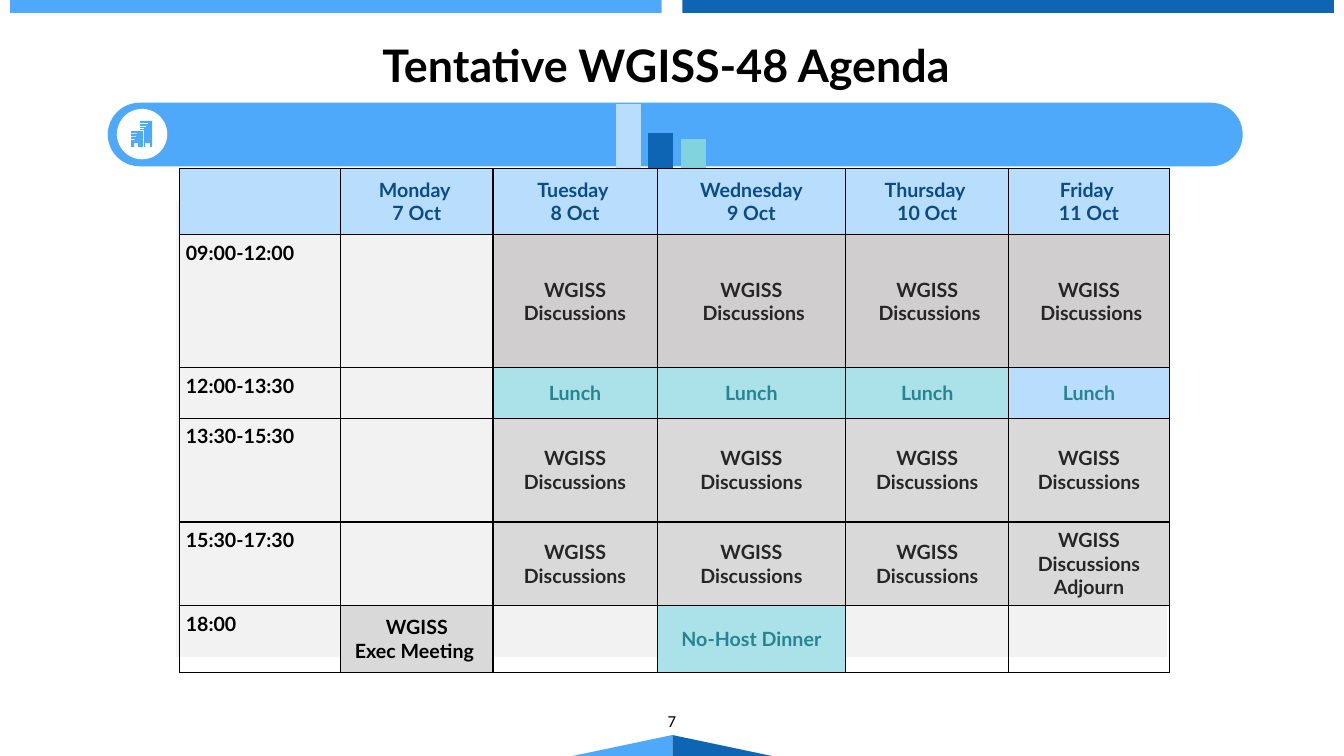
from lxml.etree import SubElement
from pptx import Presentation
from pptx.chart.data import CategoryChartData
from pptx.dml.color import RGBColor
from pptx.enum.chart import XL_CHART_TYPE as ChartType
from pptx.enum.shapes import MSO_SHAPE as Preset
from pptx.enum.text import MSO_ANCHOR as Anchor, PP_ALIGN as Align
from pptx.oxml import parse_xml
from pptx.oxml.ns import nsdecls, qn
from pptx.util import Pt

BLUE, NAVY, PALE, WHITE, BLACK = "4EA9FA", "0E65B4", "B8DDFD", "FFFFFF", "000000"
TEAL, MINT, GREY, DARK = "268591", "ABE2E9", "D9D9D9", "262626"

COLUMNS = [115.2, 108.7, 117.4, 134.6, 116.6, 114.5]
ROWS = [47.5, 95, 36, 74.2, 59.8, 47.5]
SESSION, SPLIT, INDENTED = "WGISS Discussions", "WGISS\nDiscussions", "WGISS\n Discussions"
AGENDA = [
    ["", "Monday \n7 Oct", "Tuesday \n8 Oct", "Wednesday\n9 Oct", "Thursday \n10 Oct", "Friday \n11 Oct"],
    ["09:00-12:00", "", SESSION, INDENTED, INDENTED, INDENTED],
    ["12:00-13:30", "", "Lunch", "Lunch", "Lunch", "Lunch"],
    ["13:30-15:30", "", SESSION, SPLIT, SESSION, SESSION],
    ["15:30-17:30", "", SESSION, SPLIT, SESSION, SESSION + "\nAdjourn"],
    ["18:00", "WGISS\nExec Meeting ", "", "No-Host Dinner", "", ""],
]
CELL_STYLES = {
    "H": (PALE, "0A4C87"), "M": ("D0CECE", DARK), "S": (GREY, DARK), "E": (GREY, BLACK),
    "L": (MINT, TEAL), "F": (PALE, TEAL), "T": (None, BLACK), ".": (None, BLACK),
}
STYLE_GRID = ["HHHHHH", "T.MMMM", "T.LLLF", "T.SSSS", "T.SSSS", "TE.D..".replace("D", "L")]

TALL_BUILDING = [
    (100.1, 86.4), (108.7, 86.4), (108.7, 105.1), (107.3, 105.1), (107.3, 102.2), (103.7, 102.2),
    (103.7, 105.1), (103, 105.1), (103, 92.9), (100.1, 92.9), (100.1, 92.2), (103, 92.2),
    (103, 91.4), (100.1, 91.4), (100.1, 90.7), (104.4, 90.7), (104.4, 90), (100.1, 90),
    (100.1, 88.6), (105.8, 88.6), (105.8, 87.8), (100.1, 87.8),
]
LOW_BUILDING = [
    (93.6, 93.6), (102.2, 93.6), (102.2, 105.1), (98.6, 105.1), (98.6, 102.2), (95.8, 102.2),
    (95.8, 105.1), (93.6, 105.1), (93.6, 100.1), (96.1, 100.1), (96.1, 99.4), (93.6, 99.4),
    (93.6, 97.9), (97.2, 97.9), (97.2, 97.2), (93.6, 97.2), (93.6, 95.9), (97.9, 95.9),
    (97.9, 95.4), (93.6, 95.4),
]


def color(hex_code):
    """Return the colour for a hex string."""
    return RGBColor.from_string(hex_code)


def paint(shape, fill):
    """Give a shape a plain fill without line or shadow."""
    shape.shadow.inherit = False
    shape.fill.solid()
    shape.fill.fore_color.rgb = color(fill)
    shape.line.fill.background()


def add_preset(slide, preset, left, top, width, height, fill):
    """Add a filled preset shape."""
    shape = slide.shapes.add_shape(preset, Pt(left), Pt(top), Pt(width), Pt(height))
    paint(shape, fill)
    return shape


def add_polygon(slide, points, fill):
    """Add a filled closed outline."""
    corners = [(Pt(x), Pt(y)) for x, y in points]
    builder = slide.shapes.build_freeform(*corners[0])
    builder.add_line_segments(corners[1:], close=True)
    paint(builder.convert_to_shape(), fill)


def style_text(frame, font_name, size, hex_code, align, bold):
    """Format every paragraph of a text frame."""
    frame.word_wrap = True
    for paragraph in frame.paragraphs:
        paragraph.alignment = align
        font = paragraph.font
        font.name, font.size, font.bold = font_name, Pt(size), bold
        font.color.rgb = color(hex_code)


def add_label(slide, text, left, top, width, height, font_name, size, bold=False):
    """Add a centred line of text."""
    box = slide.shapes.add_textbox(Pt(left), Pt(top), Pt(width), Pt(height))
    frame = box.text_frame
    frame.text = text
    frame.vertical_anchor = Anchor.MIDDLE
    frame.margin_left = frame.margin_right = frame.margin_top = frame.margin_bottom = 0
    style_text(frame, font_name, size, BLACK, Align.CENTER, bold)


def add_borders(cell):
    """Draw a thin black line on each side of a cell."""
    properties = cell._tc.get_or_add_tcPr()
    for index, side in enumerate(("lnL", "lnR", "lnT", "lnB")):
        properties.insert(index, parse_xml(
            f'<a:{side} {nsdecls("a")} w="12700"><a:solidFill>'
            f'<a:srgbClr val="{BLACK}"/></a:solidFill></a:{side}>'))


def fill_cell(cell, text, style):
    """Write and format one agenda cell."""
    fill, hex_code = CELL_STYLES[style]
    if fill:
        cell.fill.solid()
        cell.fill.fore_color.rgb = color(fill)
    else:
        cell.fill.background()
    cell.margin_left = cell.margin_right = cell.margin_top = cell.margin_bottom = Pt(4.5)
    cell.vertical_anchor = Anchor.TOP if style == "T" else Anchor.MIDDLE
    cell.text = text
    align = Align.LEFT if style == "T" else Align.CENTER
    style_text(cell.text_frame, "Lato", 14, hex_code, align, True)
    add_borders(cell)


def add_agenda(slide):
    """Add the agenda table."""
    table = slide.shapes.add_table(
        len(ROWS), len(COLUMNS), Pt(128.2), Pt(120.2), Pt(sum(COLUMNS)), Pt(sum(ROWS))).table
    table.first_row = table.horz_banding = False
    for column, width in zip(table.columns, COLUMNS):
        column.width = Pt(width)
    for row, height, texts, styles in zip(table.rows, ROWS, AGENDA, STYLE_GRID):
        row.height = Pt(height)
        for cell, text, style in zip(row.cells, texts, styles):
            fill_cell(cell, text, style)


def add_bars(slide):
    """Add the small column chart."""
    data = CategoryChartData()
    data.categories = ["1"]
    for number, value in enumerate((100, 56, 47), 1):
        data.add_series(f"Series {number}", [value])
    chart = slide.shapes.add_chart(
        ChartType.COLUMN_CLUSTERED, Pt(417.6), Pt(64.1), Pt(110.2), Pt(59), data).chart
    chart.has_legend = chart.has_title = False
    chart.font.name, chart.font.size = "Calibri", Pt(10)
    chart.font.color.rgb = color(BLACK)
    chart.value_axis.minimum_scale, chart.value_axis.maximum_scale = 0, 120
    chart.value_axis.has_major_gridlines = False
    chart.value_axis.visible = chart.category_axis.visible = False
    plot = chart.plots[0]
    plot.gap_width, plot.overlap, plot.vary_by_categories = 225, -30, False
    for series, fill in zip(plot.series, (PALE, NAVY, "81D4DE")):
        series.format.fill.solid()
        series.format.fill.fore_color.rgb = color(fill)
    area = chart._chartSpace.chart.plotArea
    for old_layout in area.findall(qn("c:layout")):
        area.remove(old_layout)
    layout = parse_xml(f'<c:layout {nsdecls("c")}><c:manualLayout/></c:layout>')
    area.insert(0, layout)
    settings = {"layoutTarget": "inner", "xMode": "edge", "yMode": "edge",
                "x": "0.02", "y": "0.01", "w": "0.95", "h": "0.97"}
    for name, value in settings.items():
        SubElement(layout[0], qn(f"c:{name}")).set("val", value)


def main():
    """Build the agenda slide."""
    presentation = Presentation()
    presentation.slide_width, presentation.slide_height = Pt(960), Pt(540)
    slide = presentation.slides.add_slide(presentation.slide_layouts[6])
    for fill, edge, bar_left in ((NAVY, 551.5, 487.4), (BLUE, 408.9, 7.2)):
        add_polygon(slide, [(480.2, 525), (edge, 540), (480.2, 540)], fill)
        add_preset(slide, Preset.RECTANGLE, bar_left, 0, 465.4, 9.2, fill)
    add_label(slide, "Tentative WGISS-48 Agenda ", -26, 26.8, 1011.6, 39, "Lato", 32, True)
    add_label(slide, "7", 372, 500.4, 216, 28.8, "Calibri", 12)
    add_preset(slide, Preset.RECTANGLE, 126, 144, 707.8, 325.4, "F2F2F2")
    banner = add_preset(slide, Preset.ROUNDED_RECTANGLE, 77, 73.4, 810.7, 45.4, BLUE)
    banner.adjustments[0] = 0.5
    add_preset(slide, Preset.OVAL, 83.5, 77.8, 36, 36, WHITE)
    for building in (TALL_BUILDING, LOW_BUILDING):
        add_polygon(slide, building, BLUE)
    add_bars(slide)
    add_agenda(slide)
    presentation.save("out.pptx")


if __name__ == "__main__":
    main()
